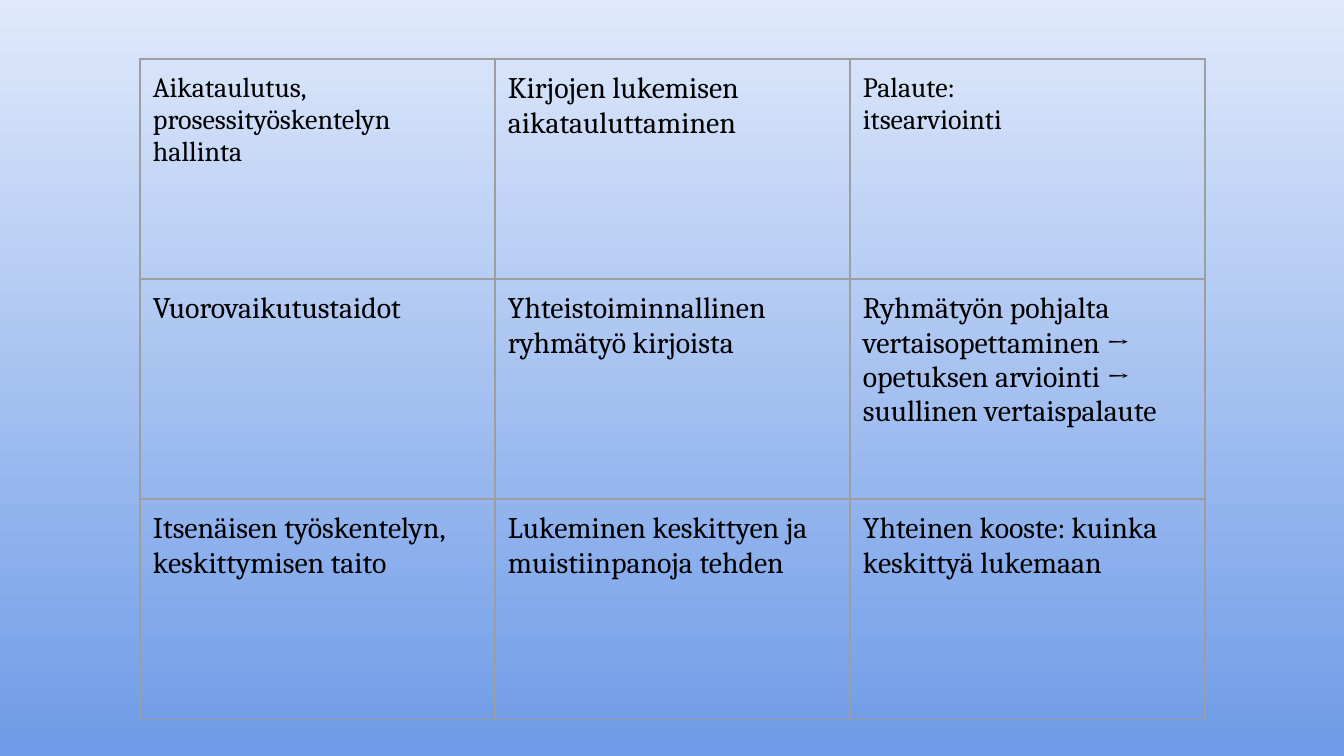
import dataclasses

import pptx
import pptx.dml.color
import pptx.oxml
import pptx.oxml.ns
import pptx.util

EMU_PER_PX = 914400 / 134.4
FONT = "Cambria"
TEXT = "000000"
BORDER = "9E9E9E"
BACKGROUND = ("DFE9FB", "6E9BE7")
LEFT, TOP = 140, 59
COL_W, ROW_H = 355, 220
MARGIN = 13


@dataclasses.dataclass
class Skill:
    lines: tuple[str, ...]
    size: int = 16


GRID = [
    [
        Skill(("Aikataulutus,", "prosessityöskentelyn hallinta"), 15),
        Skill(("Kirjojen lukemisen aikatauluttaminen",)),
        Skill(("Palaute:", "itsearviointi"), 15),
    ],
    [
        Skill(("Vuorovaikutustaidot",)),
        Skill(("Yhteistoiminnallinen", "ryhmätyö kirjoista")),
        Skill(("Ryhmätyön pohjalta",
               "vertaisopettaminen → opetuksen arviointi → suullinen vertaispalaute")),
    ],
    [
        Skill(("Itsenäisen työskentelyn,", "keskittymisen taito")),
        Skill(("Lukeminen keskittyen ja muistiinpanoja tehden",)),
        Skill(("Yhteinen kooste: kuinka keskittyä lukemaan",)),
    ],
]


def px(n: int) -> int:
    return round(n * EMU_PER_PX)


def rgb(value: str) -> pptx.dml.color.RGBColor:
    return pptx.dml.color.RGBColor.from_string(value)


def set_all(obj, values: dict) -> None:
    for name, value in values.items():
        setattr(obj, name, value)


def draw_background(s) -> None:
    fill = s.background.fill
    fill.gradient()
    fill.gradient_angle = 270
    for stop, color in zip(fill.gradient_stops, BACKGROUND):
        stop.color.rgb = rgb(color)


def draw_borders(cell) -> None:
    tc_pr = cell._tc.get_or_add_tcPr()
    for side in ("lnL", "lnR", "lnT", "lnB"):
        tc_pr.append(pptx.oxml.parse_xml(
            f'<a:{side} {pptx.oxml.ns.nsdecls("a")} w="{pptx.util.Pt(0.75)}">'
            f'<a:solidFill><a:srgbClr val="{BORDER}"/></a:solidFill></a:{side}>'
        ))


def draw_cell(cell, skill: Skill) -> None:
    sides = ("left", "right", "top", "bottom")
    set_all(cell, {f"margin_{side}": px(MARGIN) for side in sides})
    draw_borders(cell)
    cell.fill.background()
    tf = cell.text_frame
    tf.text = "\n".join(skill.lines)
    for p in tf.paragraphs:
        for r in p.runs:
            set_all(r.font, {"name": FONT, "size": pptx.util.Pt(skill.size)})
            r.font.color.rgb = rgb(TEXT)


def draw_table(s, grid: list[list[Skill]]) -> None:
    rows, cols = len(grid), len(grid[0])
    sp = s.shapes.add_table(rows, cols, px(LEFT), px(TOP),
                            px(COL_W * cols), px(ROW_H * rows))
    table = sp.table
    set_all(table, {"first_row": False, "horz_banding": False})
    for i, row in enumerate(grid):
        for j, skill in enumerate(row):
            draw_cell(table.cell(i, j), skill)


def main() -> None:
    prs = pptx.Presentation()
    set_all(prs, {"slide_width": px(1344), "slide_height": px(756)})
    s = prs.slides.add_slide(prs.slide_layouts[6])
    draw_background(s)
    draw_table(s, GRID)
    prs.save("out.pptx")


if __name__ == "__main__":
    main()
